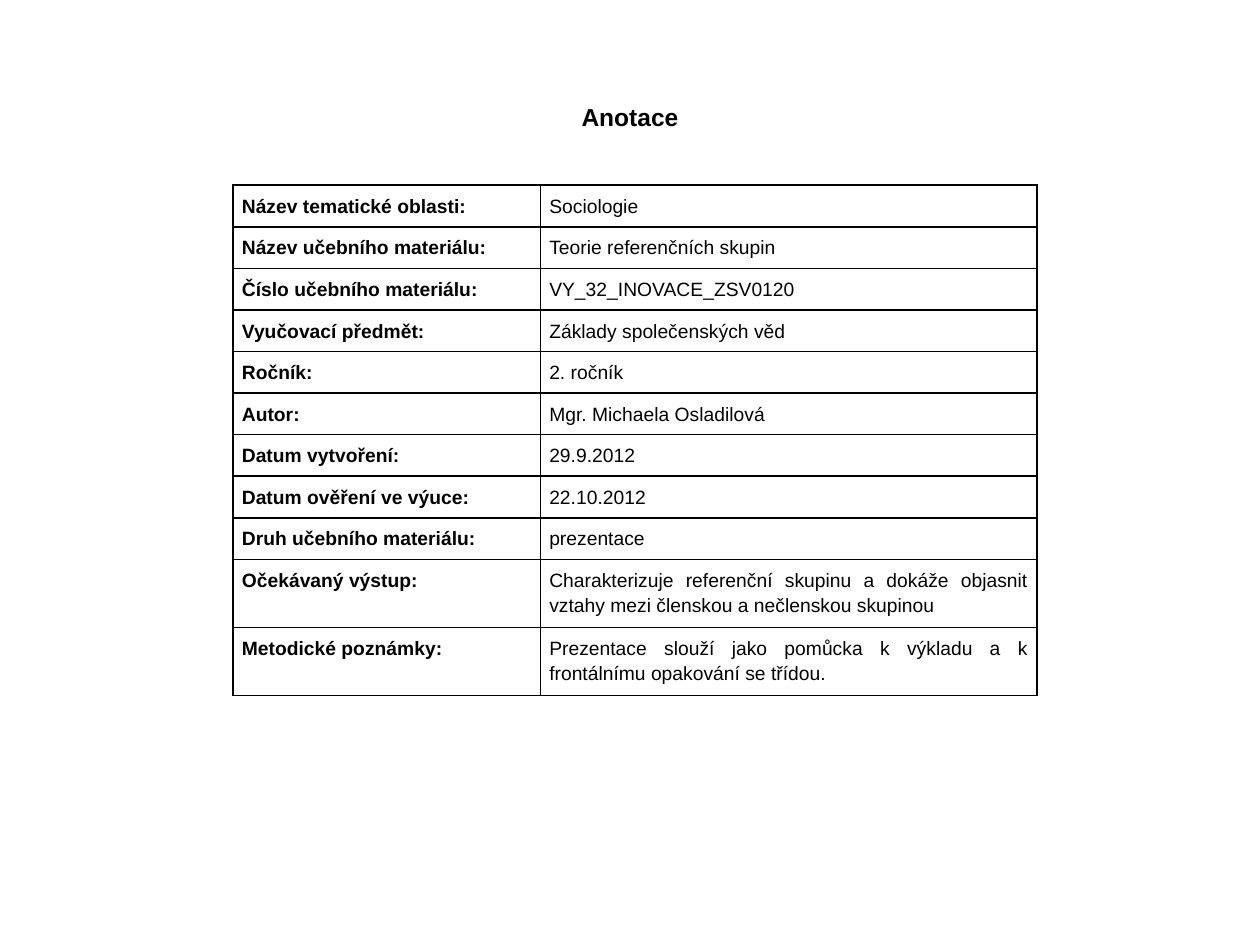
from lxml.etree import SubElement
from pptx import Presentation
from pptx.dml.color import RGBColor
from pptx.enum.text import MSO_ANCHOR as Anchor, PP_ALIGN as Align
from pptx.oxml.ns import qn
from pptx.util import Inches, Pt

BLACK, WHITE = "000000", "FFFFFF"
ANNOTATION = [
    ("Název tematické oblasti:", "Sociologie"),
    ("Název učebního materiálu:", "Teorie referenčních skupin"),
    ("Číslo učebního materiálu:", "VY_32_INOVACE_ZSV0120"),
    ("Vyučovací předmět:", "Základy společenských věd"),
    ("Ročník:", "2. ročník"),
    ("Autor:", "Mgr. Michaela Osladilová"),
    ("Datum vytvoření:", "29.9.2012"),
    ("Datum ověření ve výuce:", "22.10.2012"),
    ("Druh učebního materiálu:", "prezentace"),
    ("Očekávaný výstup:",
     "Charakterizuje referenční skupinu a dokáže objasnit "
     "vztahy mezi členskou a nečlenskou skupinou"),
    ("Metodické poznámky:",
     "Prezentace slouží jako pomůcka k výkladu a k "
     "frontálnímu opakování se třídou."),
]
COLUMN_WIDTHS = (2.44, 3.94)
ROW_HEIGHT, TALL_ROW_HEIGHT = 0.33, 0.54
TALL_ROWS = 2  # the last rows hold two lines of text


def color(hex_value):
    return RGBColor.from_string(hex_value)


def format_paragraph(paragraph, size, bold, align):
    paragraph.alignment = align
    font = paragraph.font
    font.name, font.size, font.bold = "Arial", Pt(size), bold
    font.color.rgb = color(BLACK)


def add_borders(cell, hex_value, width):
    properties = cell._tc.get_or_add_tcPr()
    for side in ("a:lnL", "a:lnR", "a:lnT", "a:lnB"):
        line = SubElement(properties, qn(side), w=str(Pt(width)))
        fill = SubElement(line, qn("a:solidFill"))
        SubElement(fill, qn("a:srgbClr"), val=hex_value)


def fill_cell(cell, text, bold, align):
    cell.margin_left = cell.margin_right = Inches(0.07)
    cell.margin_top = cell.margin_bottom = Inches(0.06)
    add_borders(cell, BLACK, 1)
    cell.fill.solid()
    cell.fill.fore_color.rgb = color(WHITE)
    cell.text = text
    paragraph = cell.text_frame.paragraphs[0]
    format_paragraph(paragraph, 11, bold, align)
    paragraph.line_spacing = 1.15


def place_heading(slide, left, top, width, height):
    heading = slide.shapes.title
    heading.left, heading.top = Inches(left), Inches(top)
    heading.width, heading.height = Inches(width), Inches(height)
    frame = heading.text_frame
    frame.text = "Anotace"
    frame.vertical_anchor = Anchor.MIDDLE
    format_paragraph(frame.paragraphs[0], 14, True, Align.CENTER)


def add_annotation_table(slide, left, top):
    single_rows = len(ANNOTATION) - TALL_ROWS
    heights = [ROW_HEIGHT] * single_rows + [TALL_ROW_HEIGHT] * TALL_ROWS
    table = slide.shapes.add_table(
        len(ANNOTATION), len(COLUMN_WIDTHS), Inches(left), Inches(top),
        Inches(sum(COLUMN_WIDTHS)), Inches(sum(heights))).table
    table.first_row = table.horz_banding = False
    for column, width in zip(table.columns, COLUMN_WIDTHS):
        column.width = Inches(width)
    for row, height, (label, value) in zip(table.rows, heights, ANNOTATION):
        row.height = Inches(height)
        fill_cell(row.cells[0], label, True, Align.LEFT)
        fill_cell(row.cells[1], value, False, Align.JUSTIFY)


def main():
    deck = Presentation()
    deck.slide_width, deck.slide_height = Inches(10), Inches(7.5)
    slide = deck.slides.add_slide(deck.slide_layouts[5])
    place_heading(slide, 0, 0.68, 10, 0.5)
    add_annotation_table(slide, 1.85, 1.47)
    deck.save("out.pptx")


if __name__ == "__main__":
    main()
